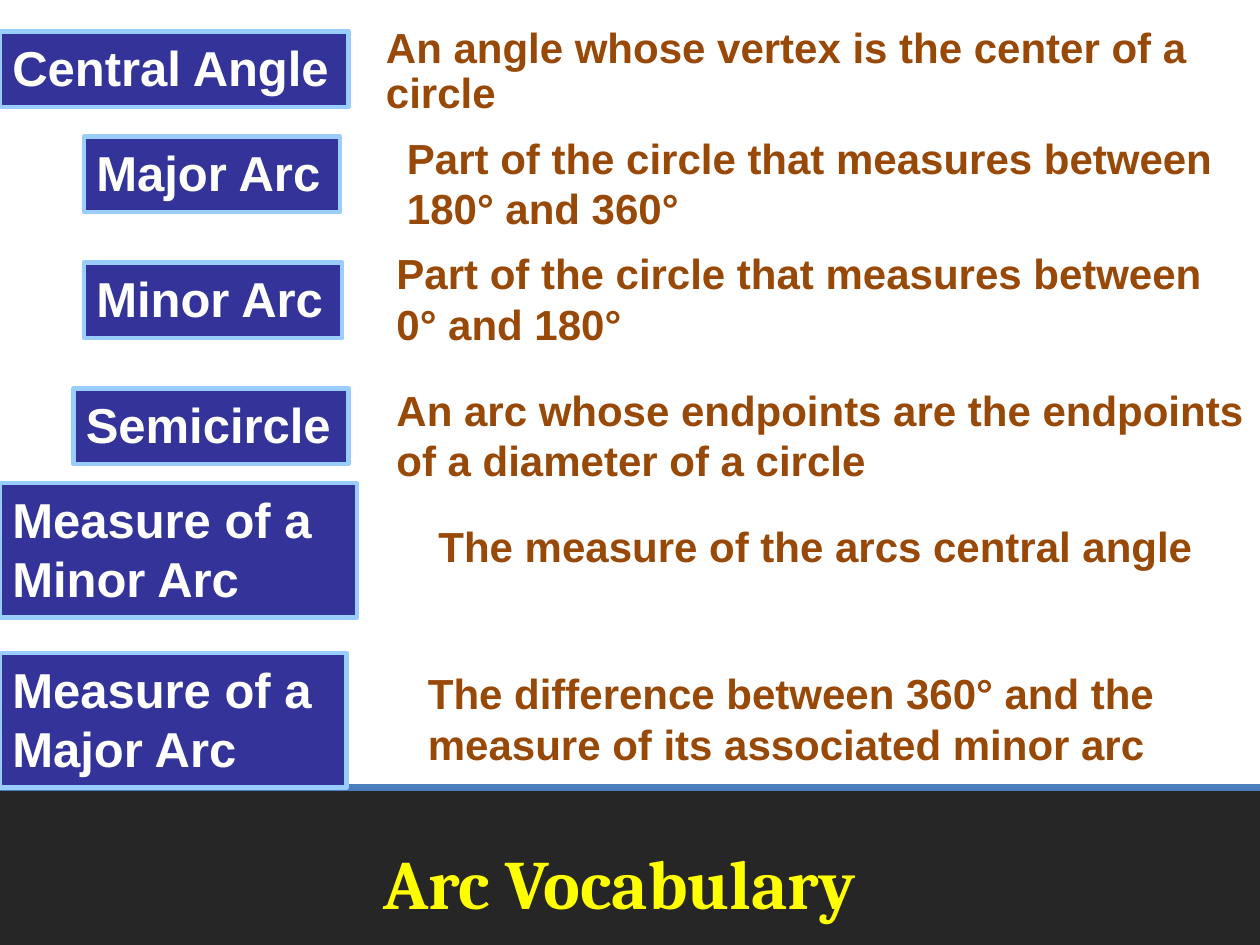
"""Build the arc vocabulary slide on a grid of 120 columns by 90 rows."""
from dataclasses import dataclass

import lxml.etree
import pptx
import pptx.dml.color
import pptx.enum.shapes
import pptx.enum.text
import pptx.oxml.ns
import pptx.util

RGBColor = pptx.dml.color.RGBColor
WHITE = RGBColor(0xFF, 0xFF, 0xFF)
CHARCOAL = RGBColor(0x26, 0x26, 0x26)
STEEL_BLUE = RGBColor(0x4B, 0x7E, 0xBC)
YELLOW = RGBColor(0xFF, 0xFF, 0x00)
BROWN = RGBColor(0x98, 0x48, 0x07)
NAVY = RGBColor(0x33, 0x33, 0x99)
SKY_BLUE = RGBColor(0x99, 0xCC, 0xFF)

SLIDE_WIDTH = pptx.util.Inches(10)
SLIDE_HEIGHT = pptx.util.Inches(7.5)
COLUMNS, ROWS = 120, 90
FOOTER_ROW = 75
DEFINITION_INDENT = pptx.util.Inches(0.48)


@dataclass(frozen=True)
class Box:
    """A rectangle in grid columns and rows."""

    column: float
    row: float
    columns: float
    rows: float

    def lengths(self) -> tuple[int, int, int, int]:
        """Return left, top, width and height as slide lengths."""
        return (
            across(self.column),
            down(self.row),
            across(self.columns),
            down(self.rows),
        )


@dataclass(frozen=True)
class Entry:
    """A vocabulary term and its definition."""

    term: str
    term_box: Box
    definition: str
    definition_box: Box
    line_spacing: float = 1.0
    wrap_term: bool = False


ENTRIES = (
    Entry("Central Angle", Box(0, 3, 33.2, 7.2),
          "An angle whose vertex is the center of a circle",
          Box(31, 2, 89, 10), line_spacing=0.9),
    Entry("Major Arc", Box(8, 13, 24.4, 7.2),
          "Part of the circle that measures between 180° and 360°",
          Box(33, 12, 87, 9)),
    Entry("Minor Arc", Box(8, 25, 24.6, 7.2),
          "Part of the circle that measures between 0° and 180°",
          Box(32, 23, 88, 11)),
    Entry("Semicircle", Box(7, 37, 26.2, 7.2),
          "An arc whose endpoints are the endpoints of a diameter of a circle",
          Box(32, 36, 88, 13.5)),
    Entry("Measure of a Minor Arc", Box(0, 46, 34, 12.8),
          "The measure of the arcs central angle",
          Box(36, 49, 81, 10), wrap_term=True),
    Entry("Measure of a Major Arc", Box(0, 62.2, 33, 12.8),
          "The difference between 360° and the measure of its associated minor arc",
          Box(35, 63, 85, 12), wrap_term=True),
)


def across(columns: float) -> int:
    """Convert grid columns to a slide length."""
    return round(SLIDE_WIDTH * columns / COLUMNS)


def down(rows: float) -> int:
    """Convert grid rows to a slide length."""
    return round(SLIDE_HEIGHT * rows / ROWS)


def write_text(shape, text: str, *, size: float, color: RGBColor,
               font: str = "Arial", wrap: bool = True, line_spacing: float = 1.0,
               alignment=pptx.enum.text.PP_ALIGN.LEFT,
               anchor=pptx.enum.text.MSO_ANCHOR.TOP) -> None:
    """Put one bold formatted paragraph into a shape."""
    frame = shape.text_frame
    frame.word_wrap = wrap
    frame.vertical_anchor = anchor
    paragraph = frame.paragraphs[0]
    paragraph.alignment = alignment
    paragraph.line_spacing = line_spacing
    run = paragraph.add_run()
    run.text = text
    run.font.name = font
    run.font.size = pptx.util.Pt(size)
    run.font.bold = True
    run.font.color.rgb = color


def add_rectangle(slide, box: Box, fill: RGBColor):
    """Add a flat filled rectangle without an outline."""
    shape = slide.shapes.add_shape(
        pptx.enum.shapes.MSO_SHAPE.RECTANGLE, *box.lengths())
    shape.shadow.inherit = False
    shape.fill.solid()
    shape.fill.fore_color.rgb = fill
    shape.line.fill.background()
    return shape


def add_footer(slide) -> None:
    """Add the dark band, its top rule and the slide title."""
    add_rectangle(slide, Box(0, FOOTER_ROW, COLUMNS, ROWS - FOOTER_ROW), CHARCOAL)
    rule = slide.shapes.add_connector(
        pptx.enum.shapes.MSO_CONNECTOR.STRAIGHT,
        0, down(FOOTER_ROW), SLIDE_WIDTH, down(FOOTER_ROW))
    rule.line.color.rgb = STEEL_BLUE
    rule.line.width = pptx.util.Pt(4)
    lxml.etree.SubElement(
        rule._element.spPr, pptx.oxml.ns.qn("a:effectLst"))
    title = slide.shapes.add_textbox(*Box(5, 80, 108, 8).lengths())
    write_text(title, "Arc Vocabulary", size=39.6, color=YELLOW, font="Cambria",
               alignment=pptx.enum.text.PP_ALIGN.CENTER,
               anchor=pptx.enum.text.MSO_ANCHOR.MIDDLE)


def add_entry(slide, entry: Entry) -> None:
    """Add a framed term and the definition beside it."""
    definition = slide.shapes.add_textbox(*entry.definition_box.lengths())
    definition.text_frame.margin_left = DEFINITION_INDENT
    write_text(definition, entry.definition, size=24, color=BROWN,
               line_spacing=entry.line_spacing)
    term = add_rectangle(slide, entry.term_box, NAVY)
    term.line.color.rgb = SKY_BLUE
    term.line.width = pptx.util.Pt(2.5)
    write_text(term, entry.term, size=28, color=WHITE, wrap=entry.wrap_term)
    term.text_frame.auto_size = pptx.enum.text.MSO_AUTO_SIZE.SHAPE_TO_FIT_TEXT


def main() -> None:
    """Create and save the presentation."""
    presentation = pptx.Presentation()
    presentation.slide_width = SLIDE_WIDTH
    presentation.slide_height = SLIDE_HEIGHT
    slide = presentation.slides.add_slide(presentation.slide_layouts[6])
    add_footer(slide)
    for entry in ENTRIES:
        add_entry(slide, entry)
    presentation.save("out.pptx")


if __name__ == "__main__":
    main()
